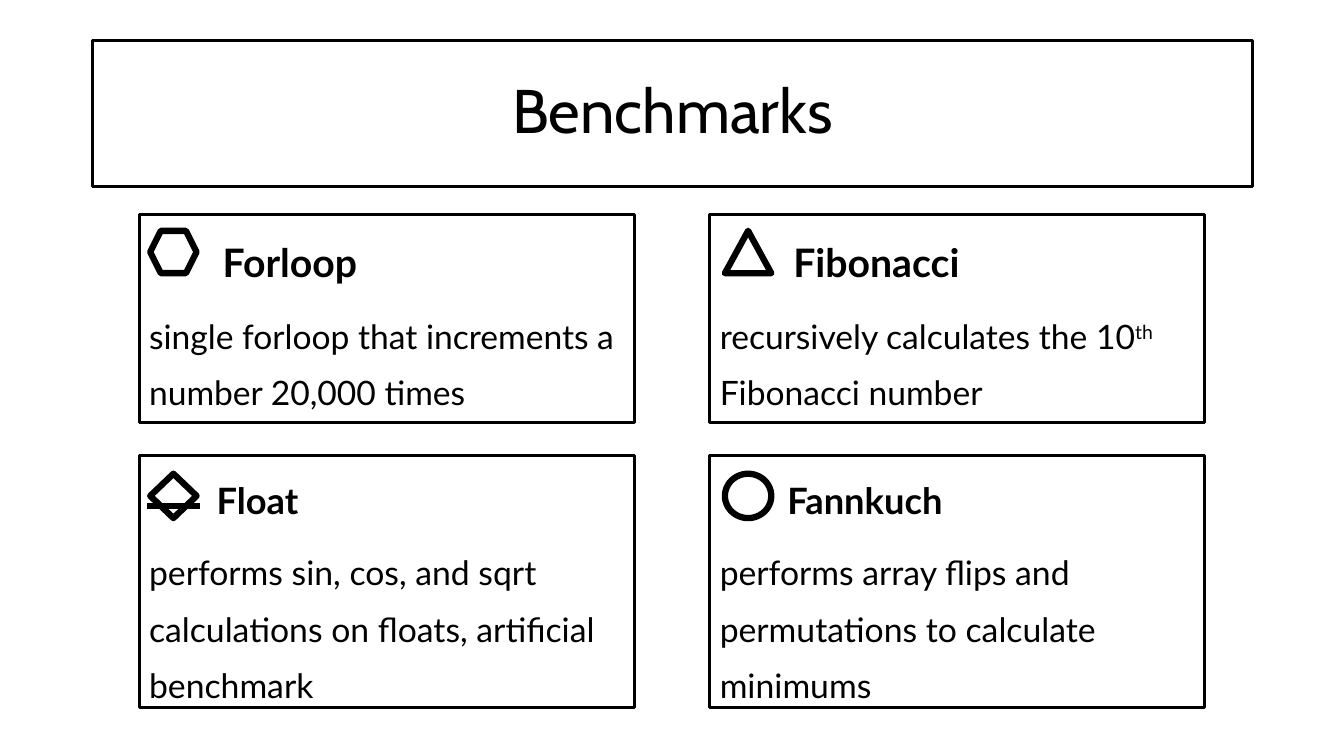
from pptx import Presentation
from pptx.dml.color import RGBColor
from pptx.enum.shapes import MSO_CONNECTOR as Link, MSO_SHAPE as Kind
from pptx.enum.text import MSO_ANCHOR as Anchor, MSO_AUTO_SIZE as Fit, PP_ALIGN as Align
from pptx.oxml.ns import qn
from pptx.util import Inches, Pt
from lxml import etree

INK, PAPER = "000000", "FFFFFF"


def color(code):
    return RGBColor.from_string(code)


def frame(shape, width):
    """White fill with a black outline."""
    shape.fill.solid()
    shape.fill.fore_color.rgb = color(PAPER)
    shape.line.color.rgb = color(INK)
    shape.line.width = Pt(width)


def write(para, text, size, font="Lato", bold=False, raised=False):
    run = para.add_run()
    run.text = text
    run.font.name = font
    run.font.size = Pt(size)
    run.font.bold = bold
    run.font.color.rgb = color(INK)
    if raised:
        run.font._element.set("baseline", "30000")


def add_title(slide, text, left, top, width, height):
    title = slide.shapes.title
    title.left, title.top = Inches(left), Inches(top)
    title.width, title.height = Inches(width), Inches(height)
    frame(title, 2.25)
    body = title.text_frame
    body.auto_size = Fit.NONE
    body.vertical_anchor = Anchor.MIDDLE
    para = body.paragraphs[0]
    para.alignment = Align.CENTER
    para.line_spacing = 0.9
    write(para, text, 44, font="Cabin")


def add_shape(slide, kind, left, top, width, height, line):
    shape = slide.shapes.add_shape(
        kind, Inches(left), Inches(top), Inches(width), Inches(height))
    shape.shadow.inherit = False
    frame(shape, line)
    return shape


def add_bar(slide, left, top, width):
    bar = slide.shapes.add_connector(
        Link.STRAIGHT, Inches(left), Inches(top), Inches(left + width), Inches(top))
    bar.line.color.rgb = color(INK)
    bar.line.width = Pt(4.5)
    etree.SubElement(bar._element.spPr, qn("a:effectLst"))


def add_card(slide, left, top, height, head, parts, sizes, indent):
    """Boxed card: indented heading over a description of (text, raised) parts."""
    card = add_shape(slide, Kind.RECTANGLE, left, top, 4.91, height, 2.25)
    body = card.text_frame
    body.word_wrap = True
    body.vertical_anchor = Anchor.TOP
    first, second = body.paragraphs[0], body.add_paragraph()
    for para in (first, second):
        para.alignment = Align.LEFT
        para.line_spacing = 1.4
        para.space_before = Pt(10)
    # Room for the icon
    props = first._p.get_or_add_pPr()
    props.set("marL", str(Inches(indent)))
    props.set("indent", "0")
    write(first, head, sizes[0], bold=True)
    for text, raised in parts:
        write(second, text, sizes[1], raised=raised)


def add_icon(slide, kind, left, top, height):
    add_shape(slide, kind, left, top, 0.46, height, 4.5)


# Each row: top, card height, icon offset, icon height, text sizes, indent, cards
ROWS = [
    (2.13, 2.06, 0.16, 0.42, (28, 24), 0.73, [
        ("Forloop", Kind.HEXAGON,
         [("single forloop that increments a number 20,000 times", False)]),
        ("Fibonacci", Kind.ISOSCELES_TRIANGLE,
         [("recursively calculates the 10", False), ("th", True),
          (" Fibonacci number", False)]),
    ]),
    (4.52, 2.5, 0.18, 0.44, (25.9, 24.1), 0.67, [
        ("Float", Kind.DIAMOND,
         [("performs sin, cos, and sqrt calculations on floats, "
           "artificial benchmark", False)]),
        ("Fannkuch", Kind.OVAL,
         [("performs array flips and permutations to calculate minimums", False)]),
    ]),
]
COLS = [(1.38, 0.11), (7.04, 0.15)]  # card left, icon offset


def main():
    deck = Presentation()
    deck.slide_width, deck.slide_height = Inches(13.33), Inches(7.5)
    slide = deck.slides.add_slide(deck.slide_layouts[5])
    add_title(slide, "Benchmarks", 0.92, 0.4, 11.5, 1.45)

    # Grid of benchmark cards
    for top, height, drop, tall, sizes, indent, cards in ROWS:
        for (left, shift), (head, kind, parts) in zip(COLS, cards):
            add_card(slide, left, top, height, head, parts, sizes, indent)
            add_icon(slide, kind, left + shift, top + drop, tall)

    # Stroke across the Float diamond
    add_bar(slide, 1.46, 5.02, 0.52)
    deck.save("out.pptx")


if __name__ == "__main__":
    main()
